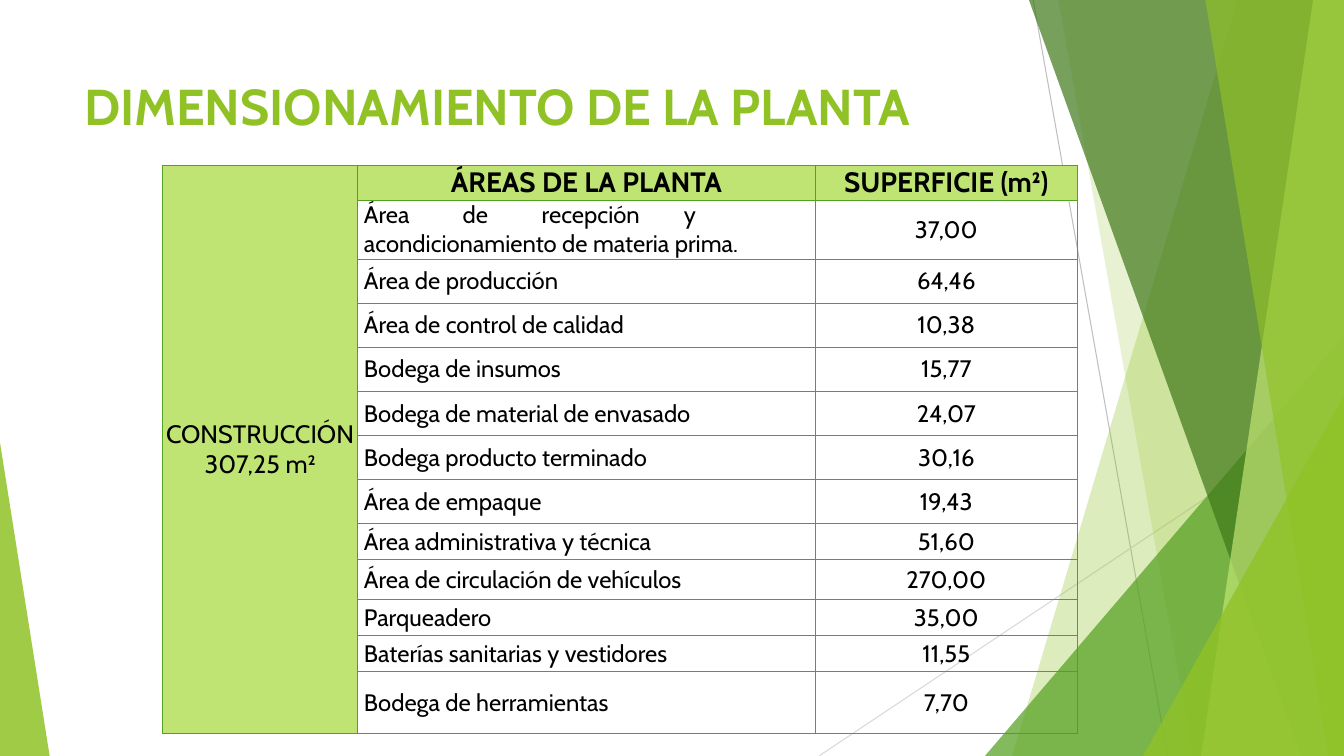
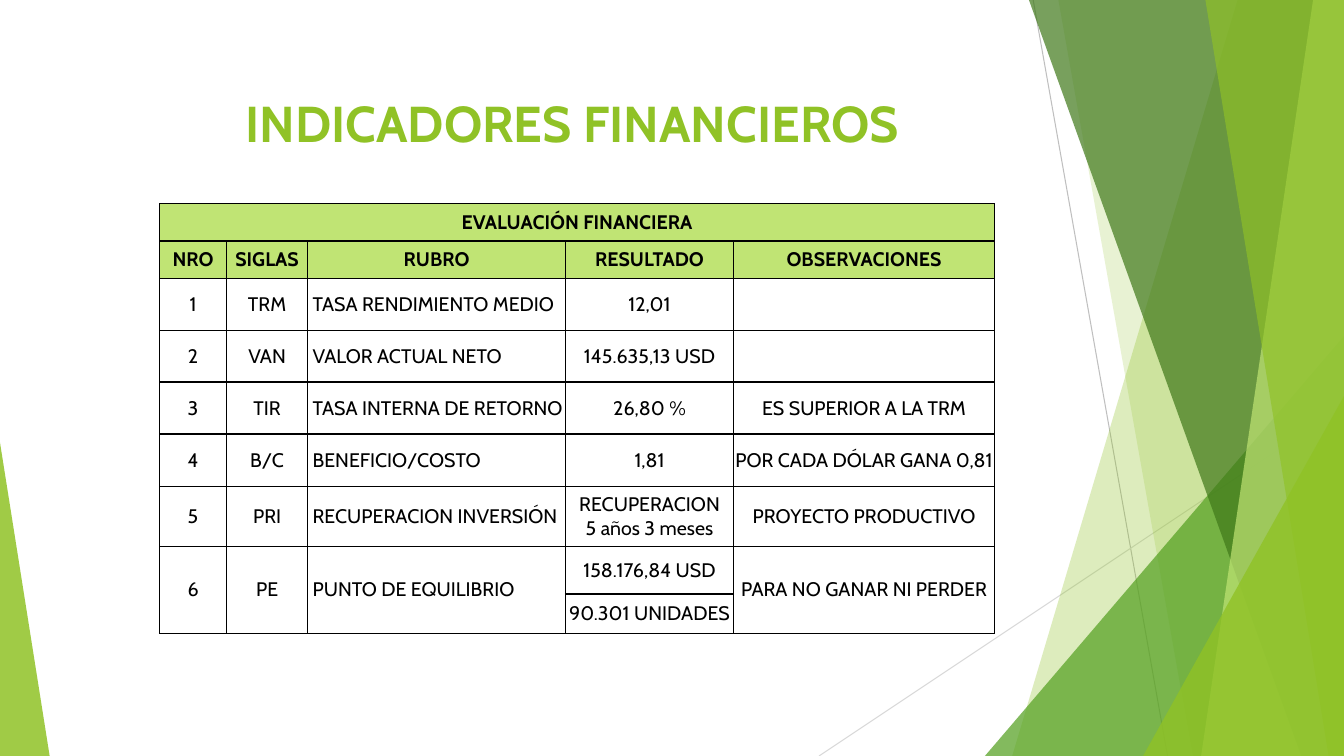
from lxml.etree import SubElement
from pptx import Presentation
from pptx.dml.color import RGBColor
from pptx.enum.shapes import MSO_CONNECTOR, MSO_SHAPE
from pptx.enum.text import MSO_ANCHOR, PP_ALIGN
from pptx.oxml.ns import qn
from pptx.util import Pt

FONT = "Cabin"
GREEN = "90C226"
LEAF = "54A021"
LIME = "C0E474"
BLACK = "000000"
WIDE, HIGH = 960, 540


def paint(fill, color):
    fill.solid()
    fill.fore_color.rgb = RGBColor.from_string(color)


def style(frame, size, color, bold, align):
    for para in frame.paragraphs:
        para.alignment = align
        for run in para.runs:
            font = run.font
            font.name = FONT
            font.size = Pt(size)
            font.bold = bold
            font.color.rgb = RGBColor.from_string(color)


deck = Presentation()
deck.slide_width, deck.slide_height = Pt(WIDE), Pt(HIGH)
layout = deck.slide_layouts[5]
first = deck.slides.add_slide(layout)
second = deck.slides.add_slide(layout)

decor = []
for x1, y1, x2, y2, color in [
    (738, 0, 834, HIGH, "BFBFBF"),
    (WIDE, 290, 585, HIGH, "D9D9D9"),
]:
    line = first.shapes.add_connector(
        MSO_CONNECTOR.STRAIGHT, Pt(x1), Pt(y1), Pt(x2), Pt(y2)
    )
    paint(line.line.fill, color)
    line.line.width = Pt(0.75)
    SubElement(line.element.spPr, qn("a:effectLst"))
    decor.append(line)

for kind, dims, color, alpha in [
    ("band", (884, 723), GREEN, 30),
    ("band", (756, 852), GREEN, 20),
    ("peak", (703.5, 240, 256.5, 300, 1), LEAF, 72),
    ("band", (735, 929.5), "3F7819", 70),
    ("band", (938, 858), LIME, 70),
    ("band", (861, 949), GREEN, 65),
    ("peak", (816.5, 283, 143.5, 257, 1), GREEN, 80),
    ("peak", (0, 316, 35.5, 224, 0), GREEN, 85),
]:
    if kind == "band":
        top, base = dims
        path = first.shapes.build_freeform(Pt(top), 0)
        path.add_line_segments(
            [(Pt(WIDE), 0), (Pt(WIDE), Pt(HIGH)), (Pt(base), Pt(HIGH))], close=True
        )
        shape = path.convert_to_shape()
    else:
        *box, tip = dims
        shape = first.shapes.add_shape(
            MSO_SHAPE.ISOSCELES_TRIANGLE, *[Pt(side) for side in box]
        )
        shape.adjustments[0] = tip
    shape.shadow.inherit = False
    shape.line.fill.background()
    paint(shape.fill, color)
    tint = shape.element.xpath(".//a:solidFill/a:srgbClr")[0]
    SubElement(tint, qn("a:alpha")).set("val", str(alpha * 1000))
    decor.append(shape)

for rank, shape in enumerate(decor):
    shape.element.xpath(".//p:cNvPr")[0].set("id", str(20 + rank))
    layout.shapes.element.insert(2 + rank, shape.element)

areas = [
    ("CONSTRUCCIÓN\n307,25 m²", "ÁREAS DE LA PLANTA", "SUPERFICIE (m²)"),
    ("", "Área\tde\trecepción\ty\nacondicionamiento de materia prima.", "37,00"),
    ("", "Área de producción", "64,46"),
    ("", "Área de control de calidad", "10,38"),
    ("", "Bodega de insumos", "15,77"),
    ("", "Bodega de material de envasado", "24,07"),
    ("", "Bodega producto terminado", "30,16"),
    ("", "Área de empaque", "19,43"),
    ("", "Área administrativa y técnica", "51,60"),
    ("", "Área de circulación de vehículos", "270,00"),
    ("", "Parqueadero", "35,00"),
    ("", "Baterías sanitarias y vestidores", "11,55"),
    ("", "Bodega de herramientas", "7,70"),
]
rates = [
    ("EVALUACIÓN FINANCIERA", "", "", "", ""),
    ("NRO", "SIGLAS", "RUBRO", "RESULTADO", "OBSERVACIONES"),
    ("1", "TRM", "TASA RENDIMIENTO MEDIO", "12,01", ""),
    ("2", "VAN", "VALOR ACTUAL NETO", "145.635,13 USD", ""),
    ("3", "TIR", "TASA INTERNA DE RETORNO", "26,80 %", "ES SUPERIOR A LA TRM"),
    ("4", "B/C", "BENEFICIO/COSTO", "1,81", "POR CADA DÓLAR GANA 0,81"),
    ("5", "PRI", "RECUPERACION INVERSIÓN", "RECUPERACION\n5 años 3 meses",
     "PROYECTO PRODUCTIVO"),
    ("6", "PE", "PUNTO DE EQUILIBRIO", "158.176,84 USD", "PARA NO GANAR NI PERDER"),
    ("", "", "", "90.301 UNIDADES", ""),
]

pages = [
    dict(
        slide=first, title="DIMENSIONAMIENTO DE LA PLANTA", place=(53, 50, 677, 89),
        data=areas, spot=(116, 118), edge=LEAF, sizes=(20, 17), heads=1, left=1,
        cols=[139.5, 327, 187],
        rows=[25, 42.2] + [31.5] * 6 + [25.7, 28.6, 25.7, 25.7, 44.3],
        spans=[(0, 0, 12, 0)], indent=4.5,
    ),
    dict(
        slide=second, title="INDICADORES FINANCIEROS", place=(168, 62, 677, 104),
        data=rates, spot=(114, 145.5), edge=BLACK, sizes=(14, 14), heads=2, left=2,
        cols=[47.8, 58, 184.2, 120, 186.5],
        rows=[26.6, 26.6, 37.4, 36.8, 37.2, 37.2, 43.2, 33.8, 28],
        spans=[(0, 0, 0, 4)] + [(7, col, 8, col) for col in (0, 1, 2, 4)], indent=3.5,
    ),
]

for page in pages:
    title = page["slide"].shapes.title
    title.left, title.top, title.width, title.height = [Pt(n) for n in page["place"]]
    title.text_frame.text = page["title"]
    title.text_frame.vertical_anchor = MSO_ANCHOR.TOP
    style(title.text_frame, 36, GREEN, True, PP_ALIGN.LEFT)

    cols, rows = page["cols"], page["rows"]
    x, y = page["spot"]
    table = page["slide"].shapes.add_table(
        len(rows), len(cols), Pt(x), Pt(y), Pt(sum(cols)), Pt(sum(rows))
    ).table
    table.first_row = table.horz_banding = False
    for col, width in zip(table.columns, cols):
        col.width = Pt(width)
    for row, height in zip(table.rows, rows):
        row.height = Pt(height)
    for r1, c1, r2, c2 in page["spans"]:
        table.cell(r1, c1).merge(table.cell(r2, c2))

    for r, texts in enumerate(page["data"]):
        for c, text in enumerate(texts):
            cell = table.cell(r, c)
            side = page is pages[0] and c == 0
            head = r < page["heads"]
            label = c == page["left"] and not head
            cell.margin_left = Pt(page["indent"] if label else 0)
            cell.margin_right = cell.margin_top = cell.margin_bottom = 0
            cell.vertical_anchor = MSO_ANCHOR.MIDDLE
            props = cell._tc.get_or_add_tcPr()
            for name in ("a:lnL", "a:lnR", "a:lnT", "a:lnB"):
                rule = SubElement(props, qn(name), w=str(Pt(1)))
                solid = SubElement(rule, qn("a:solidFill"))
                SubElement(solid, qn("a:srgbClr"), val=page["edge"])
            if head or side:
                paint(cell.fill, LIME)
            else:
                cell.fill.background()
            if text:
                cell.text_frame.text = text
                size = 18 if side else page["sizes"][0 if head else 1]
                align = PP_ALIGN.LEFT if label else PP_ALIGN.CENTER
                style(cell.text_frame, size, BLACK, head and not side, align)
            if "\t" in text:
                para = cell.text_frame.paragraphs[0]
                tabs = SubElement(para._p.get_or_add_pPr(), qn("a:tabLst"))
                for stop in (70.5, 127, 228.5):
                    SubElement(tabs, qn("a:tab"), pos=str(Pt(stop)), algn="l")

deck.save("out.pptx")
